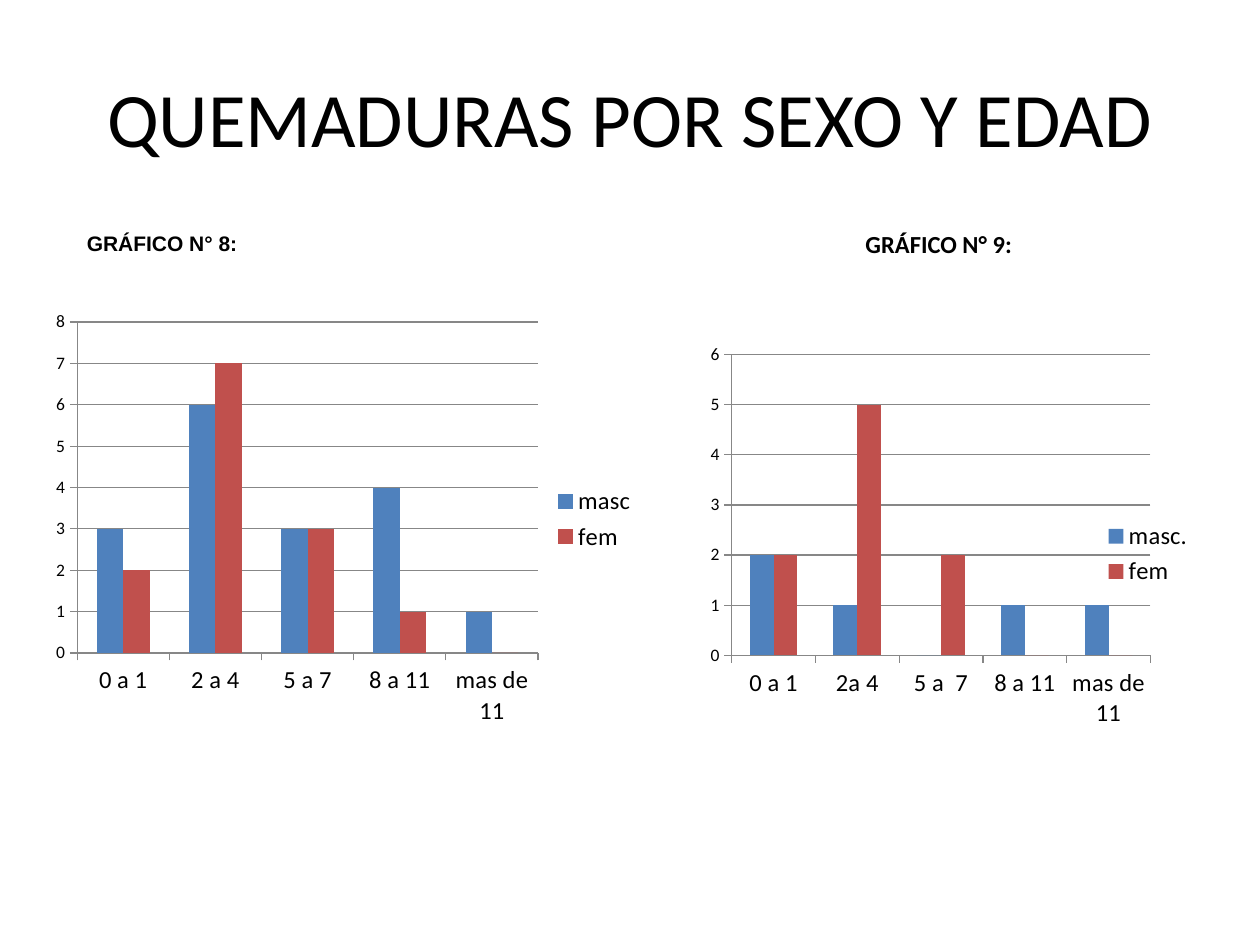
"""Build the slide comparing burns by sex and age in two column charts."""
from dataclasses import dataclass
from typing import Optional

from lxml import etree
from pptx import Presentation
from pptx import util as u
from pptx.chart import data as cd
from pptx.dml import color as col
from pptx.enum import chart as ch
from pptx.enum import text
from pptx.oxml import ns

COLORS = {"text": "000000", "line": "878787", "masc": "4F81BD", "fem": "C0504D"}


@dataclass(frozen=True)
class Box:
    x: float
    y: float
    w: float
    h: float

    def pts(self) -> list:
        return [u.Pt(v) for v in (self.x, self.y, self.w, self.h)]


@dataclass(frozen=True)
class BurnChart:
    box: Box
    cats: list
    masc: tuple
    fem: tuple
    top: int
    plot: Optional[Box] = None


def rgb(name: str) -> col.RGBColor:
    return col.RGBColor.from_string(COLORS[name])


def style_font(font, size: float, name: str = "Calibri", bold: bool = False) -> None:
    font.size, font.name, font.bold = u.Pt(size), name, bold
    font.color.rgb = rgb("text")


def add_text(s, content: str, box: Box, *, size: float, name: str = "Calibri",
             bold: bool = False, align=text.PP_ALIGN.LEFT) -> None:
    tf = s.shapes.add_textbox(*box.pts()).text_frame
    tf.word_wrap = True
    tf.vertical_anchor = text.MSO_ANCHOR.MIDDLE
    p = tf.paragraphs[0]
    p.alignment = align
    r = p.add_run()
    r.text = content
    style_font(r.font, size, name, bold)


def set_inner_plot(chart, plot: Box) -> None:
    area = chart.element.find(".//" + ns.qn("c:plotArea"))
    layout = area.find(ns.qn("c:layout"))
    if layout is None:
        layout = etree.Element(ns.qn("c:layout"))
        area.insert(0, layout)
    manual = etree.SubElement(layout, ns.qn("c:manualLayout"))
    values = {"layoutTarget": "inner", "xMode": "edge", "yMode": "edge",
              "x": plot.x, "y": plot.y, "w": plot.w, "h": plot.h}
    for tag, value in values.items():
        etree.SubElement(manual, ns.qn("c:" + tag)).set("val", str(value))


def style_line(line) -> None:
    line.color.rgb = rgb("line")
    line.width = u.Pt(0.75)


def add_burn_chart(s, spec_: BurnChart, masc_name: str) -> None:
    data = cd.CategoryChartData()
    data.categories = spec_.cats
    data.add_series(masc_name, spec_.masc)
    data.add_series("fem", spec_.fem)
    chart = s.shapes.add_chart(
        ch.XL_CHART_TYPE.COLUMN_CLUSTERED, *spec_.box.pts(), data).chart
    chart.has_title = False
    style_font(chart.font, 10)
    chart.has_legend = True
    chart.legend.position = ch.XL_LEGEND_POSITION.RIGHT
    chart.legend.include_in_layout = False
    style_font(chart.legend.font, 14)

    plot = chart.plots[0]
    plot.gap_width, plot.overlap, plot.vary_by_categories = 150, 0, False
    for series, name in zip(plot.series, ("masc", "fem")):
        series.format.fill.solid()
        series.format.fill.fore_color.rgb = rgb(name)

    for axis, size in ((chart.category_axis, 14), (chart.value_axis, 10)):
        axis.major_tick_mark = ch.XL_TICK_MARK.OUTSIDE
        style_line(axis.format.line)
        style_font(axis.tick_labels.font, size)
    values = chart.value_axis
    values.minimum_scale, values.maximum_scale, values.major_unit = 0, spec_.top, 1
    values.has_major_gridlines = True
    style_line(values.major_gridlines.format.line)
    if spec_.plot:
        set_inner_plot(chart, spec_.plot)


def main() -> None:
    prs = Presentation()
    prs.slide_width, prs.slide_height = u.Pt(720), u.Pt(540)
    s = prs.slides.add_slide(prs.slide_layouts[6])
    add_text(s, "QUEMADURAS POR SEXO Y EDAD", Box(36, 21.6, 648, 90),
             size=44, align=text.PP_ALIGN.CENTER)
    add_text(s, "GRÁFICO N° 9:", Box(487.5, 127, 160, 24), size=14, bold=True)
    add_burn_chart(s, BurnChart(
        Box(399.6, 196.6, 289.4, 239.8),
        ["0 a 1", "2a 4", "5 a  7", "8 a 11", "mas de 11"],
        (2, 1, 0, 1, 1), (2, 5, 2, 0, 0), 6,
        Box(0.064, 0.025, 0.827, 0.717)), "masc.")
    add_text(s, "GRÁFICO N° 8:", Box(42.5, 128.2, 133.2, 21.6),
             size=12, name="Arial", bold=True)
    add_burn_chart(s, BurnChart(
        Box(25.2, 173.5, 345.6, 246.2),
        ["0 a 1", "2 a 4", "5 a 7", "8 a 11", "mas de 11"],
        (3, 6, 3, 4, 1), (2, 7, 3, 1, 0), 8), "masc")
    prs.save("out.pptx")


if __name__ == "__main__":
    main()
